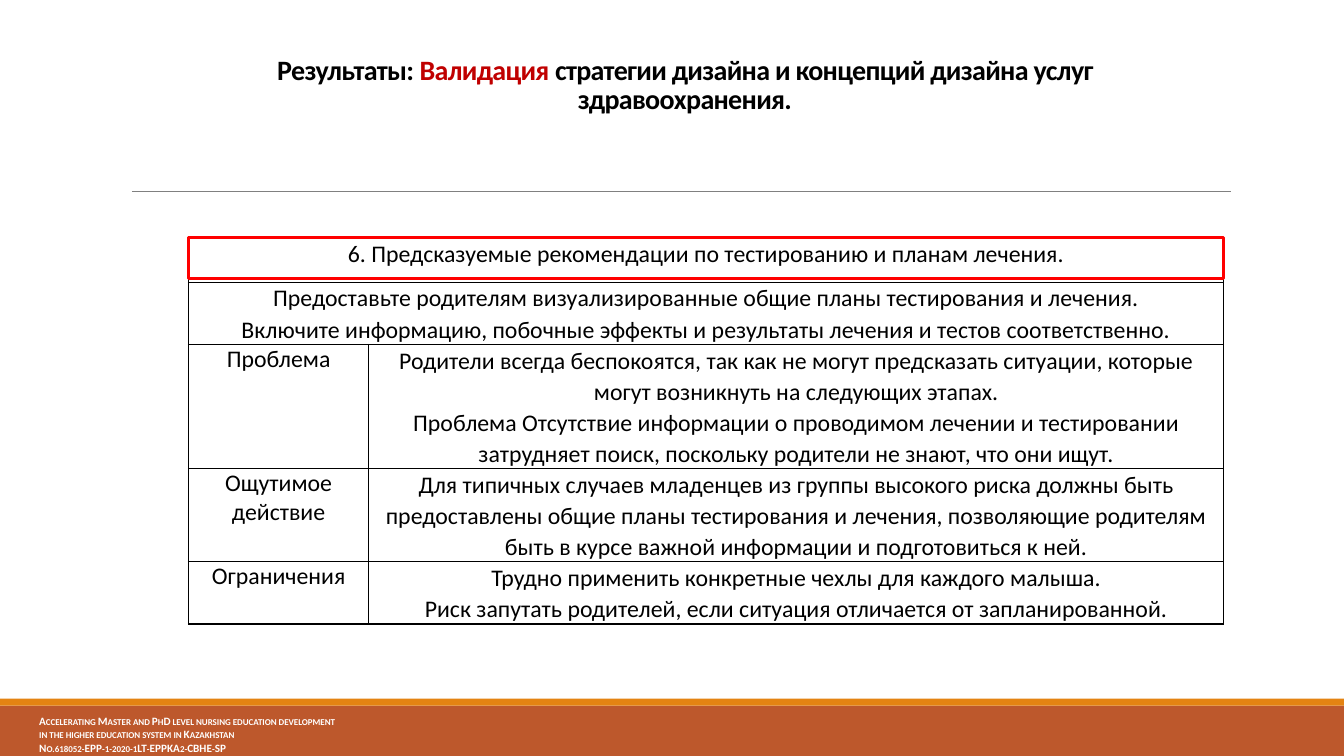
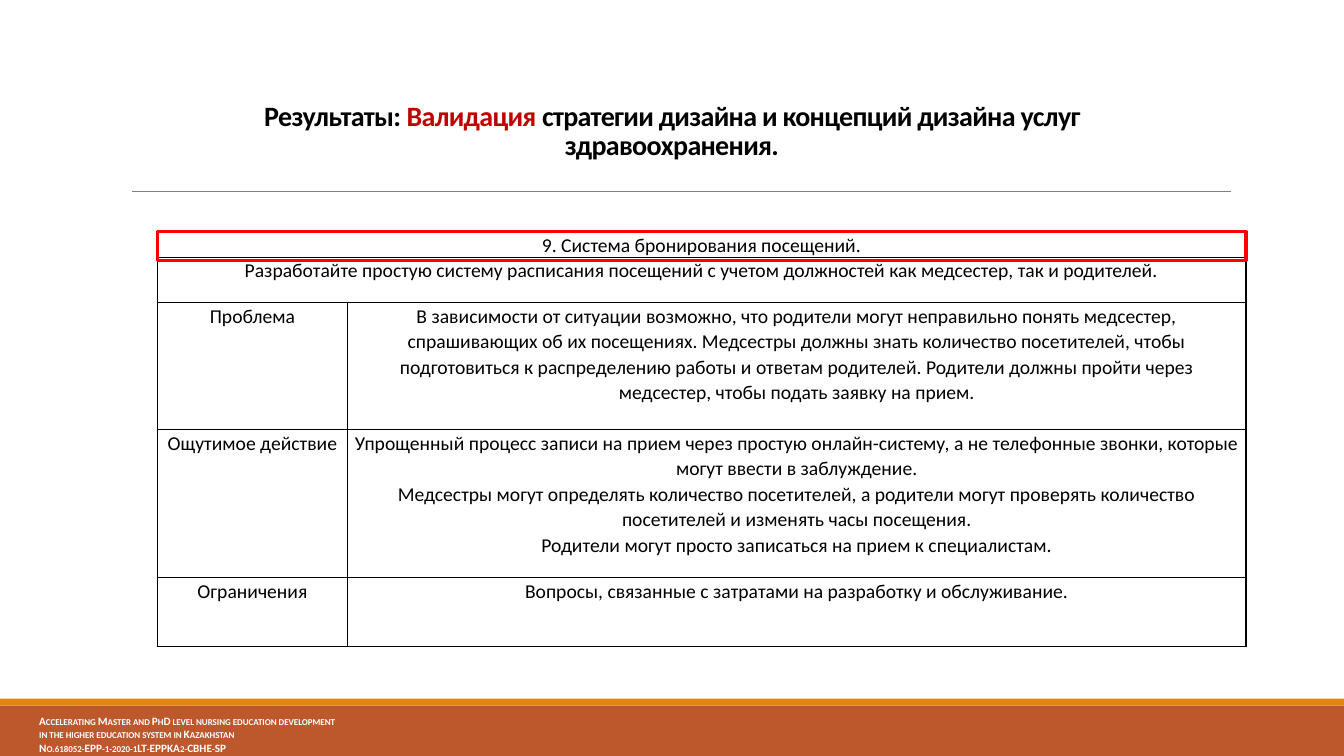
from dataclasses import dataclass

from pptx import Presentation
from pptx.dml.color import RGBColor
from pptx.enum.shapes import MSO_CONNECTOR, MSO_SHAPE
from pptx.enum.text import MSO_ANCHOR, MSO_AUTO_SIZE, PP_ALIGN
from pptx.oxml.ns import qn
from pptx.oxml.xmlchemy import OxmlElement
from pptx.slide import Slide
from pptx.table import _Cell as Cell
from pptx.text.text import _Paragraph as Paragraph
from pptx.util import Pt

BLACK = RGBColor(0x00, 0x00, 0x00)
WHITE = RGBColor(0xFF, 0xFF, 0xFF)
GREY = RGBColor(0x80, 0x80, 0x80)
RED = RGBColor(0xFF, 0x00, 0x00)
DARK_RED = RGBColor(0xC0, 0x00, 0x00)
RUST = RGBColor(0xBD, 0x58, 0x2C)
ORANGE = RGBColor(0xE4, 0x83, 0x12)

FONT = "Calibri"
SLIDE_WIDTH, SLIDE_HEIGHT = 960, 540
BAND_TOP, STRIPE_TOP = 504, 499
BODY_SPACING = 1.07

TITLE_RUNS = (
    ("Результаты: ", BLACK),
    ("Валидация", DARK_RED),
    (" стратегии дизайна и концепций дизайна услуг здравоохранения.", BLACK),
)
FOOTER_LINES = (
    "Accelerating Master and PhD level nursing education development",
    "in the higher education system in Kazakhstan",
    "No.618052-EPP-1-2020-1LT-EPPKA2-CBHE-SP",
)


@dataclass(frozen=True)
class Concept:
    title_left: float
    title_top: float
    left: float
    top: float
    column_widths: tuple[float, float]
    row_heights: tuple[float, ...]
    frame_height: float
    inset: float
    font_size: float
    label_spacing: float
    headings: tuple[str, str]
    details: tuple[tuple[str, str], ...]


CONCEPTS = (
    Concept(
        title_left=134.6, title_top=5.8, left=134.6, top=169.9,
        column_widths=(128.9, 610.6),
        row_heights=(31.7, 44.4, 88.8, 66.6, 44.4),
        frame_height=28.8, inset=3.6, font_size=17, label_spacing=1.0,
        headings=(
            "6. Предсказуемые рекомендации по тестированию и планам лечения.",
            "Предоставьте родителям визуализированные общие планы тестирования и лечения.\n"
            "Включите информацию, побочные эффекты и результаты лечения и тестов "
            "соответственно.",
        ),
        details=(
            ("Проблема",
             "Родители всегда беспокоятся, так как не могут предсказать ситуации, "
             "которые могут возникнуть на следующих этапах.\n"
             "Проблема Отсутствие информации о проводимом лечении и тестировании "
             "затрудняет поиск, поскольку родители не знают, что они ищут."),
            ("Ощутимое действие",
             "Для типичных случаев младенцев из группы высокого риска должны быть "
             "предоставлены общие планы тестирования и лечения, позволяющие родителям "
             "быть в курсе важной информации и подготовиться к ней."),
            ("Ограничения",
             "Трудно применить конкретные чехлы для каждого малыша.\n"
             "Риск запутать родителей, если ситуация отличается от запланированной."),
        ),
    ),
    Concept(
        title_left=125.3, title_top=38.9, left=112.3, top=165.6,
        column_widths=(136.1, 641.6),
        row_heights=(18.3, 32.4, 90.7, 105.8, 49),
        frame_height=20.2, inset=4.3, font_size=14, label_spacing=BODY_SPACING,
        headings=(
            "9. Система бронирования посещений.",
            "Разработайте простую систему расписания посещений с учетом должностей "
            "как медсестер, так и родителей.",
        ),
        details=(
            ("Проблема",
             "В зависимости от ситуации возможно, что родители могут неправильно понять "
             "медсестер, спрашивающих об их посещениях. Медсестры должны знать количество "
             "посетителей, чтобы подготовиться к распределению работы и ответам родителей. "
             "Родители должны пройти через медсестер, чтобы подать заявку на прием."),
            ("Ощутимое действие",
             "Упрощенный процесс записи на прием через простую онлайн-систему, а не "
             "телефонные звонки, которые могут ввести в заблуждение.\n"
             "Медсестры могут определять количество посетителей, а родители могут "
             "проверять количество посетителей и изменять часы посещения.\n"
             "Родители могут просто записаться на прием к специалистам."),
            ("Ограничения",
             "Вопросы, связанные с затратами на разработку и обслуживание."),
        ),
    ),
)


def set_font(paragraph: Paragraph, size: float, color: RGBColor, bold: bool = False) -> None:
    font = paragraph.font
    font.name, font.size, font.bold = FONT, Pt(size), bold
    font.color.rgb = color


def set_font_attribute(paragraph: Paragraph, name: str, value: str) -> None:
    paragraph._p.get_or_add_pPr().find(qn("a:defRPr")).set(name, value)


def add_band(slide: Slide, top: float, height: float, color: RGBColor) -> None:
    shape = slide.shapes.add_shape(
        MSO_SHAPE.RECTANGLE, 0, Pt(top), Pt(SLIDE_WIDTH), Pt(height))
    shape.shadow.inherit = False
    shape.fill.solid()
    shape.fill.fore_color.rgb = color
    shape.line.fill.background()


def add_background(slide: Slide) -> None:
    add_band(slide, BAND_TOP, SLIDE_HEIGHT - BAND_TOP, RUST)
    add_band(slide, STRIPE_TOP, BAND_TOP - STRIPE_TOP, ORANGE)

    rule = slide.shapes.add_connector(
        MSO_CONNECTOR.STRAIGHT, Pt(94.3), Pt(136.8), Pt(879), Pt(136.8))
    rule.line.color.rgb = GREY
    rule.line.width = Pt(0.5)
    rule._element.spPr.append(OxmlElement("a:effectLst"))

    footer = slide.shapes.add_textbox(Pt(20.9), Pt(506.6), Pt(330.5), Pt(33.4))
    frame = footer.text_frame
    frame.word_wrap = True
    frame.text = "\n".join(FOOTER_LINES)
    for paragraph in frame.paragraphs:
        set_font(paragraph, 8, WHITE, bold=True)
        set_font_attribute(paragraph, "cap", "small")


def format_title(slide: Slide, left: float, top: float) -> None:
    title = slide.shapes.title
    title.left, title.top = Pt(left), Pt(top)
    title.width, title.height = Pt(709.2), Pt(79.9)
    frame = title.text_frame
    frame.auto_size = MSO_AUTO_SIZE.NONE
    frame.word_wrap = True
    frame.vertical_anchor = MSO_ANCHOR.BOTTOM
    paragraph = frame.paragraphs[0]
    paragraph.alignment = PP_ALIGN.CENTER
    paragraph.line_spacing = 0.85
    set_font(paragraph, 20, BLACK, bold=True)
    set_font_attribute(paragraph, "spc", "-50")
    for text, color in TITLE_RUNS:
        run = paragraph.add_run()
        run.text = text
        run.font.color.rgb = color


def add_borders(cell: Cell) -> None:
    properties = cell._tc.get_or_add_tcPr()
    for side in ("a:lnL", "a:lnR", "a:lnT", "a:lnB"):
        line = OxmlElement(side)
        line.set("w", str(Pt(1)))
        fill = OxmlElement("a:solidFill")
        color = OxmlElement("a:srgbClr")
        color.set("val", str(BLACK))
        fill.append(color)
        line.append(fill)
        properties.append(line)


def fill_cell(cell: Cell, text: str, concept: Concept, spacing: float) -> None:
    cell.text_frame.text = text
    for paragraph in cell.text_frame.paragraphs:
        paragraph.alignment = PP_ALIGN.CENTER
        paragraph.line_spacing = spacing
        set_font(paragraph, concept.font_size, BLACK)


def add_concept_table(slide: Slide, concept: Concept) -> None:
    left, top = Pt(concept.left), Pt(concept.top)
    width = Pt(sum(concept.column_widths))
    table = slide.shapes.add_table(
        len(concept.row_heights), len(concept.column_widths),
        left, top, width, Pt(sum(concept.row_heights))).table
    table.first_row = table.horz_banding = False
    for column, column_width in zip(table.columns, concept.column_widths):
        column.width = Pt(column_width)
    for row, row_height in zip(table.rows, concept.row_heights):
        row.height = Pt(row_height)

    for cell in table.iter_cells():
        cell.margin_left = cell.margin_right = Pt(concept.inset)
        cell.margin_top = cell.margin_bottom = 0
        add_borders(cell)
        cell.fill.solid()
        cell.fill.fore_color.rgb = WHITE

    for row_index, heading in enumerate(concept.headings):
        table.cell(row_index, 0).merge(table.cell(row_index, 1))
        fill_cell(table.cell(row_index, 0), heading, concept, BODY_SPACING)
    for row_index, (label, body) in enumerate(concept.details, len(concept.headings)):
        fill_cell(table.cell(row_index, 0), label, concept, concept.label_spacing)
        fill_cell(table.cell(row_index, 1), body, concept, BODY_SPACING)

    frame = slide.shapes.add_shape(
        MSO_SHAPE.RECTANGLE, left, top, width, Pt(concept.frame_height))
    frame.shadow.inherit = False
    frame.fill.background()
    frame.line.color.rgb = RED
    frame.line.width = Pt(2.25)


def main() -> None:
    presentation = Presentation()
    presentation.slide_width = Pt(SLIDE_WIDTH)
    presentation.slide_height = Pt(SLIDE_HEIGHT)
    title_only = presentation.slide_layouts.get_by_name("Title Only")
    for concept in CONCEPTS:
        slide = presentation.slides.add_slide(title_only)
        add_background(slide)
        format_title(slide, concept.title_left, concept.title_top)
        add_concept_table(slide, concept)
    presentation.save("out.pptx")


if __name__ == "__main__":
    main()
